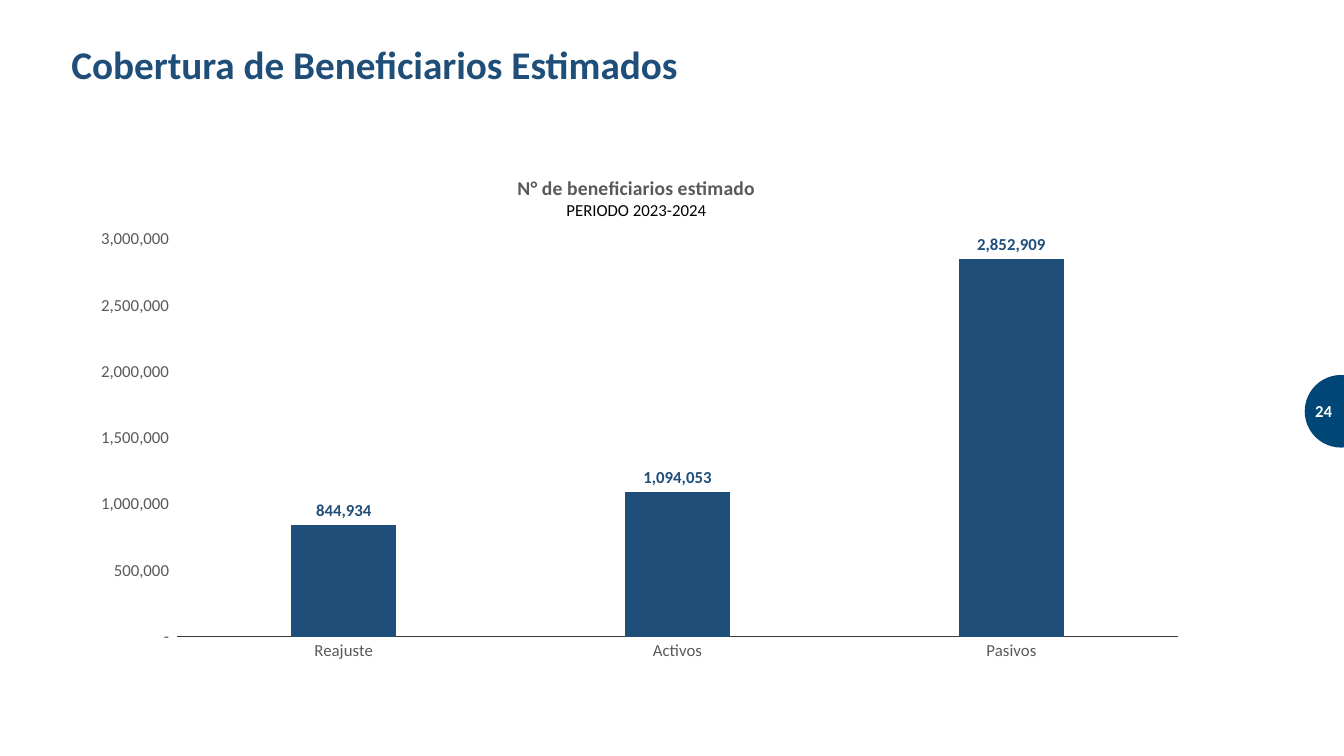
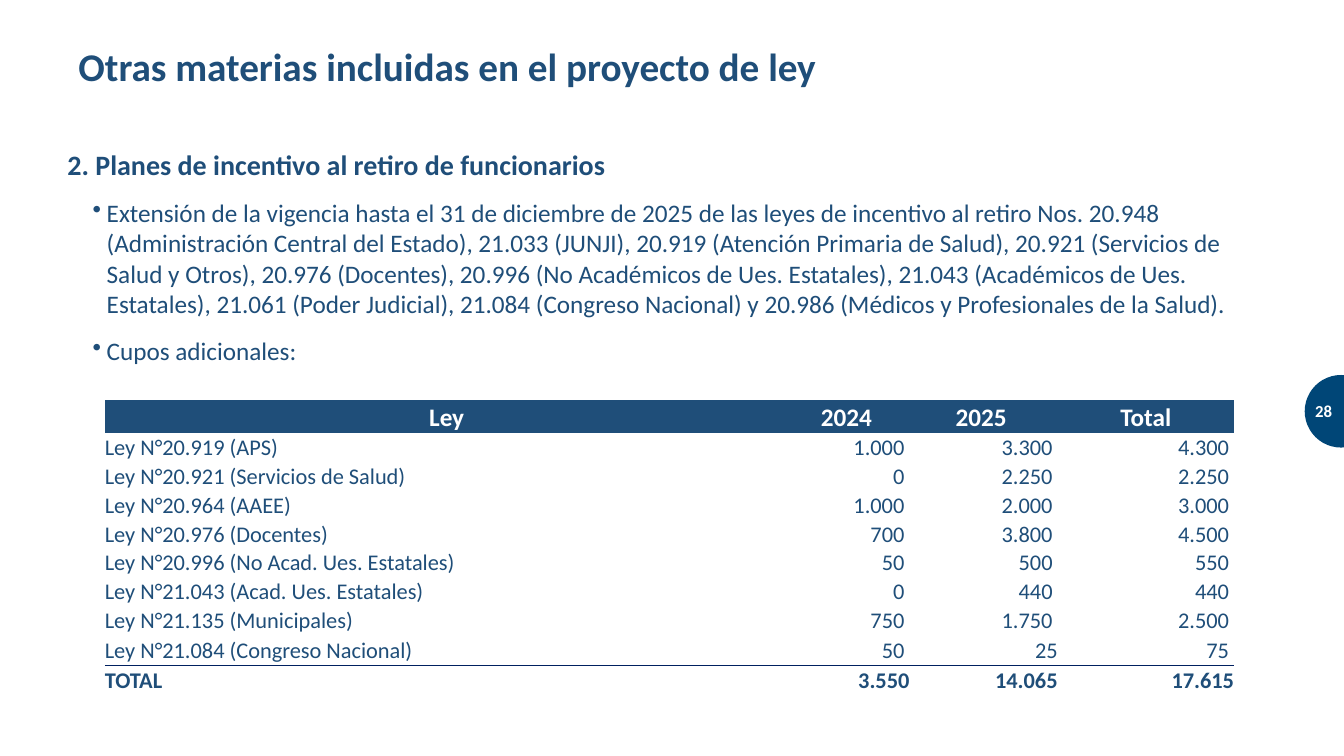
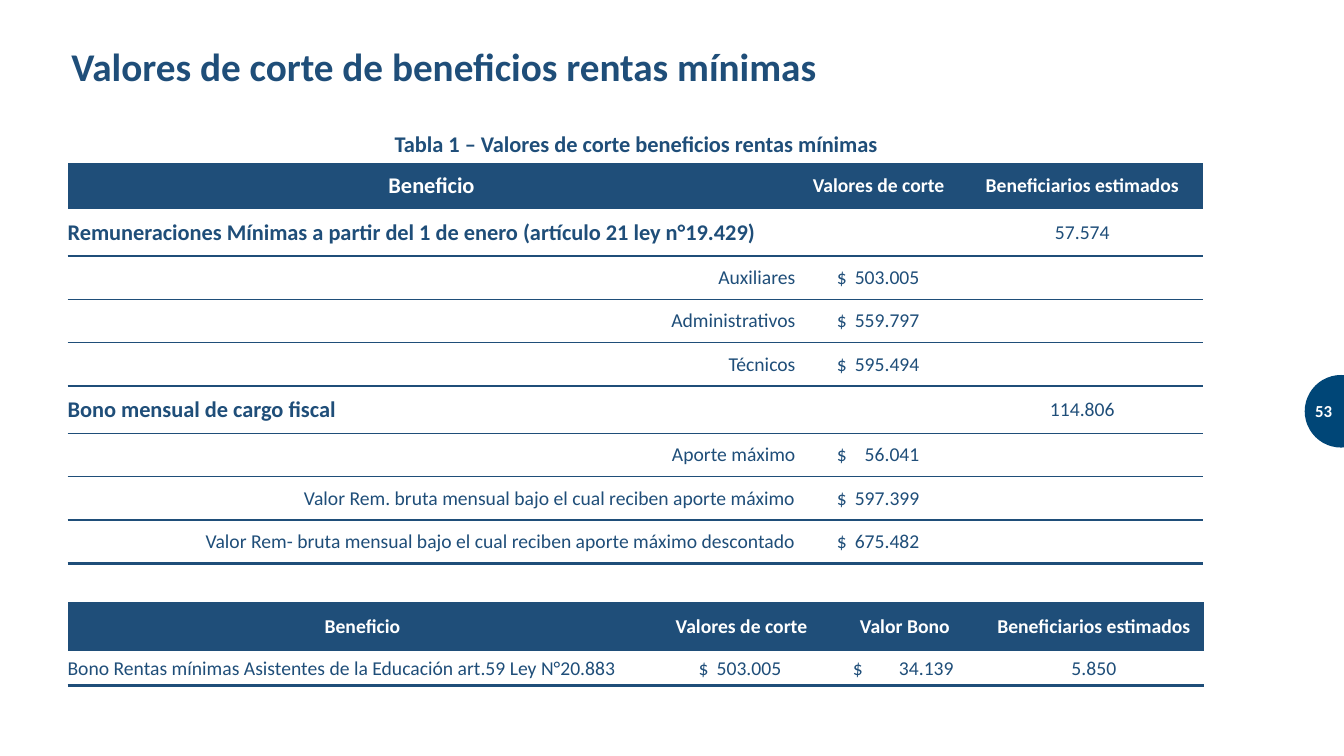
from lxml.etree import SubElement
from pptx import Presentation
from pptx.chart.data import CategoryChartData
from pptx.dml.color import RGBColor
from pptx.enum.chart import XL_CHART_TYPE as ChartType, XL_LABEL_POSITION as LabelPosition
from pptx.enum.chart import XL_TICK_MARK as TickMark
from pptx.enum.shapes import MSO_SHAPE as Shape
from pptx.enum.text import MSO_ANCHOR as Anchor, PP_ALIGN as Align
from pptx.oxml import parse_xml
from pptx.oxml.ns import nsdecls, qn
from pptx.util import Inches, Pt

FONT = "Calibri"
NAVY = RGBColor(0x1F, 0x4E, 0x79)
BADGE_BLUE = RGBColor(0x00, 0x46, 0x77)
RULE_BLUE = RGBColor(0x00, 0x20, 0x60)
AXIS_GRAY = RGBColor(0x3B, 0x38, 0x38)
GRAY = RGBColor(0x59, 0x59, 0x59)
BLACK = RGBColor(0x00, 0x00, 0x00)
WHITE = RGBColor(0xFF, 0xFF, 0xFF)
PLAIN_TABLE_STYLE = "{2D5ABB26-0587-4C30-8999-92F81FD0307C}"
NUMBER_FORMAT = '_(* #,##0_);_(* \\(#,##0\\);_(* "-"_);_(@_)'


def set_values(target, **values):
    for name, value in values.items():
        setattr(target, name, value)


def set_font(font, size, color=NAVY, bold=False):
    set_values(font, name=FONT, size=Pt(size), bold=bold)
    font.color.rgb = color


def write(paragraph, text, size, color=NAVY, bold=False, **layout):
    set_values(paragraph, **layout)
    run = paragraph.add_run()
    run.text = text
    set_font(run.font, size, color, bold)


def add_box(slide, place, anchor=Anchor.TOP):
    frame = slide.shapes.add_textbox(*map(Inches, place)).text_frame
    set_values(frame, word_wrap=True, vertical_anchor=anchor)
    return frame


def add_title(slide, text, place):
    write(add_box(slide, place, Anchor.MIDDLE).paragraphs[0], text, 28, bold=True)


def add_page_badge(slide, number):
    circle = slide.shapes.add_shape(Shape.OVAL, *map(Inches, (12.94, 3.72, 0.72, 0.72)))
    circle.shadow.inherit = False
    circle.fill.solid()
    circle.fill.fore_color.rgb = BADGE_BLUE
    circle.line.fill.background()
    frame = add_box(slide, (12.86, 3.88, 0.45, 0.4), Anchor.MIDDLE)
    write(frame.paragraphs[0], str(number), 12, WHITE, True, alignment=Align.RIGHT)


def add_bullet(frame, text, space_after):
    paragraph = frame.add_paragraph()
    properties = paragraph._p.get_or_add_pPr()
    properties.set("marL", str(Inches(0.39)))
    properties.set("indent", str(-Inches(0.14)))
    SubElement(properties, qn("a:buChar"), char="•")
    write(paragraph, text, 18, level=1, space_after=Pt(space_after))


def add_right_tab(paragraph, position):
    tabs = SubElement(paragraph._p.get_or_add_pPr(), qn("a:tabLst"))
    SubElement(tabs, qn("a:tab"), pos=str(Inches(position)), algn="r")


def add_bottom_border(cell, color, width):
    cell._tc.get_or_add_tcPr().insert(0, parse_xml(
        f'<a:lnB {nsdecls("a")} w="{Pt(width)}"><a:solidFill><a:srgbClr val="{color}"/>'
        '</a:solidFill><a:prstDash val="solid"/></a:lnB>'))


def fill_cell(cell, text, size=14, color=NAVY, bold=False, align=Align.LEFT, spacing=1.0,
              left=0, right=0, tab=None, border=None, fill=None):
    set_values(cell, margin_left=Inches(left), margin_right=Inches(right),
               margin_top=0, margin_bottom=0, vertical_anchor=Anchor.MIDDLE)
    if fill:
        cell.fill.solid()
        cell.fill.fore_color.rgb = fill
    else:
        cell.fill.background()
    if border:
        add_bottom_border(cell, *border)
    if text:
        paragraph = cell.text_frame.paragraphs[0]
        if tab:
            add_right_tab(paragraph, tab)
        write(paragraph, text, size, color, bold, alignment=align, line_spacing=spacing)


def add_table(slide, corner, widths, heights, rows, cell_format):
    size = (sum(widths), sum(heights))
    table = slide.shapes.add_table(len(rows), len(widths), *map(Inches, (*corner, *size))).table
    set_values(table, first_row=False, horz_banding=False)
    table._tbl.tblPr.find(qn("a:tableStyleId")).text = PLAIN_TABLE_STYLE
    for column, width in zip(table.columns, widths):
        column.width = Inches(width)
    for row, height in zip(table.rows, heights):
        row.height = Inches(height)
    for i, texts in enumerate(rows):
        for j, text in enumerate(texts):
            fill_cell(table.cell(i, j), text, **cell_format(i, j))


def header_format(size=14, **extra):
    return dict(size=size, color=WHITE, bold=True, align=Align.CENTER, fill=NAVY, **extra)


def set_layout(parent, index, **values):
    marks = "".join(f'<c:{name} val="{value}"/>' for name, value in values.items())
    for old in parent.findall(qn("c:layout")):
        parent.remove(old)
    parent.insert(index, parse_xml(
        f'<c:layout {nsdecls("c")}><c:manualLayout>{marks}</c:manualLayout></c:layout>'))


def add_beneficiary_chart(slide):
    data = CategoryChartData()
    data.categories = ["Reajuste", "Activos", "Pasivos"]
    data.add_series("Series 1", [844934, 1094053, 2852909])
    chart = slide.shapes.add_chart(
        ChartType.COLUMN_CLUSTERED, *map(Inches, (0.75, 1.49, 11.16, 5.19)), data).chart
    set_font(chart.font, 10, BLACK)
    chart.has_legend = False

    title = chart.chart_title.text_frame
    write(title.paragraphs[0], "N° de beneficiarios estimado", 14, GRAY, True)
    write(title.add_paragraph(), "PERIODO 2023-2024", 12, BLACK)
    set_layout(chart.chart_title._element, 1, xMode="edge", yMode="edge", x=0.39, y=0.04)
    set_layout(chart._chartSpace.chart.plotArea, 0, layoutTarget="inner", xMode="edge",
               yMode="edge", x=0.09, y=0.17, w=0.89, h=0.76)

    for axis in (chart.category_axis, chart.value_axis):
        set_values(axis, has_major_gridlines=False, major_tick_mark=TickMark.NONE,
                   minor_tick_mark=TickMark.NONE)
        set_font(axis.tick_labels.font, 12, GRAY)
    chart.category_axis.format.line.color.rgb = AXIS_GRAY
    chart.category_axis.format.line.width = Pt(0.75)
    chart.value_axis.format.line.fill.background()
    set_values(chart.value_axis, minimum_scale=0, maximum_scale=3000000, major_unit=500000)

    plot = chart.plots[0]
    set_values(plot, gap_width=219, overlap=-27, vary_by_categories=False, has_data_labels=True)
    set_values(plot.data_labels, show_value=True, position=LabelPosition.OUTSIDE_END)
    set_font(plot.data_labels.font, 12, NAVY, True)
    for labels in (chart.value_axis.tick_labels, plot.data_labels):
        set_values(labels, number_format=NUMBER_FORMAT, number_format_is_linked=False)
    fill = plot.series[0].format.fill
    fill.solid()
    fill.fore_color.rgb = NAVY


def build_coverage(slide):
    add_title(slide, "Cobertura de Beneficiarios Estimados", (0.61, 0.38, 9.18, 0.51))
    add_beneficiary_chart(slide)


def build_retirement(slide):
    add_title(slide, "Otras materias incluidas en el proyecto de ley", (0.68, 0.43, 10.32, 0.45))
    frame = add_box(slide, (0.57, 1.41, 11.93, 2.29))
    write(frame.paragraphs[0], "2. Planes de incentivo al retiro de funcionarios", 20,
          bold=True, space_after=Pt(12))
    add_bullet(
        frame,
        "Extensión de la vigencia hasta el 31 de diciembre de 2025 de las leyes de incentivo al "
        "retiro Nos. 20.948 (Administración Central del Estado), 21.033 (JUNJI), 20.919 (Atención "
        "Primaria de Salud), 20.921 (Servicios de Salud y Otros), 20.976 (Docentes), 20.996 (No "
        "Académicos de Ues. Estatales), 21.043 (Académicos de Ues. Estatales), 21.061 (Poder "
        "Judicial), 21.084 (Congreso Nacional) y 20.986 (Médicos y Profesionales de la Salud).", 12)
    add_bullet(frame, "Cupos adicionales:", 6)

    rows = [
        ("Ley", "2024", "2025", "Total"),
        ("Ley N°20.919 (APS)", "1.000", "3.300", "4.300"),
        ("Ley N°20.921 (Servicios de Salud)", "0", "2.250", "2.250"),
        ("Ley N°20.964 (AAEE)", "1.000", "2.000", "3.000"),
        ("Ley N°20.976 (Docentes)", "700", "3.800", "4.500"),
        ("Ley N°20.996 (No Acad. Ues. Estatales)", "50", "500", "550"),
        ("Ley N°21.043 (Acad. Ues. Estatales)", "0", "440", "440"),
        ("Ley N°21.135 (Municipales)", "750", "1.750", "2.500"),
        ("Ley N°21.084 (Congreso Nacional)", "50", "25", "75"),
        ("TOTAL", "3.550", "14.065", "17.615"),
    ]
    total = len(rows) - 1
    flush = {(0, 3), (total - 1, 2)}

    def quota_format(i, j):
        right = 0 if j == 0 or i == total or (i, j) in flush else 0.05
        if i == 0:
            return header_format(18, spacing=1.07, right=right)
        return dict(size=16, bold=i == total, spacing=1.07, right=right,
                    align=Align.RIGHT if j else Align.LEFT,
                    border=(RULE_BLUE, 1) if i == total - 1 else None)

    add_table(slide, (1.04, 3.97), (6.78, 1.2, 1.47, 1.75),
              (0.32, *[0.28] * 7, 0.31, 0.28), rows, quota_format)


def build_cutoffs(slide):
    add_title(slide, "Valores de corte de beneficios rentas mínimas", (0.61, 0.33, 8.32, 0.64))
    caption = add_box(slide, (0.69, 1.24, 11.24, 0.37)).paragraphs[0]
    write(caption, "Tabla 1 – Valores de corte beneficios rentas mínimas", 16, bold=True,
          alignment=Align.CENTER)

    cutoffs = [
        ("Beneficio", "Valores de corte", "Beneficiarios estimados"),
        ("Remuneraciones Mínimas a partir del 1 de enero (artículo 21 ley n°19.429)", "", "57.574"),
        ("Auxiliares", "$\t503.005", ""),
        ("Administrativos", "$\t559.797", ""),
        ("Técnicos", "$\t595.494", ""),
        ("Bono mensual de cargo fiscal", "", "114.806"),
        ("Aporte máximo", "$\t56.041", ""),
        ("Valor Rem. bruta mensual bajo el cual reciben aporte máximo", "$\t597.399", ""),
        ("Valor Rem- bruta mensual bajo el cual reciben aporte máximo descontado",
         "$\t675.482", ""),
    ]
    groups = {i for i, row in enumerate(cutoffs) if row[2]}
    amount = dict(left=0.41, tab=0.82)
    centered = dict(align=Align.CENTER)

    def cutoff_format(i, j):
        if i == 0:
            return header_format(14 if j else 16)
        label = dict(size=16, bold=True) if i in groups else dict(align=Align.RIGHT)
        border = (NAVY, 3 if i == len(cutoffs) - 1 else 1)
        return dict((label, amount, centered)[j], border=border)

    heights = [0.45] + [0.47 if i in groups else 0.43 for i in range(1, len(cutoffs))]
    add_table(slide, (0.67, 1.62), (7.22, 1.65, 2.39), heights, cutoffs, cutoff_format)

    bonus = [
        ("Beneficio", "Valores de corte", "Valor Bono", "Beneficiarios estimados"),
        ("Bono Rentas mínimas Asistentes de la Educación art.59 Ley N°20.883",
         "$\t503.005", "$\t34.139", "5.850"),
    ]

    def bonus_format(i, j):
        if i == 0:
            return header_format()
        return dict(({}, amount, dict(left=0.27, tab=1.0), centered)[j], border=(NAVY, 3))

    add_table(slide, (0.67, 5.97), (5.85, 1.67, 1.57, 2.18), (0.49, 0.34), bonus, bonus_format)


def main():
    presentation = Presentation()
    set_values(presentation, slide_width=Inches(13.33), slide_height=Inches(7.5))
    for number, build in ((24, build_coverage), (28, build_retirement), (53, build_cutoffs)):
        slide = presentation.slides.add_slide(presentation.slide_layouts[6])
        build(slide)
        add_page_badge(slide, number)
    presentation.save("out.pptx")


if __name__ == "__main__":
    main()
